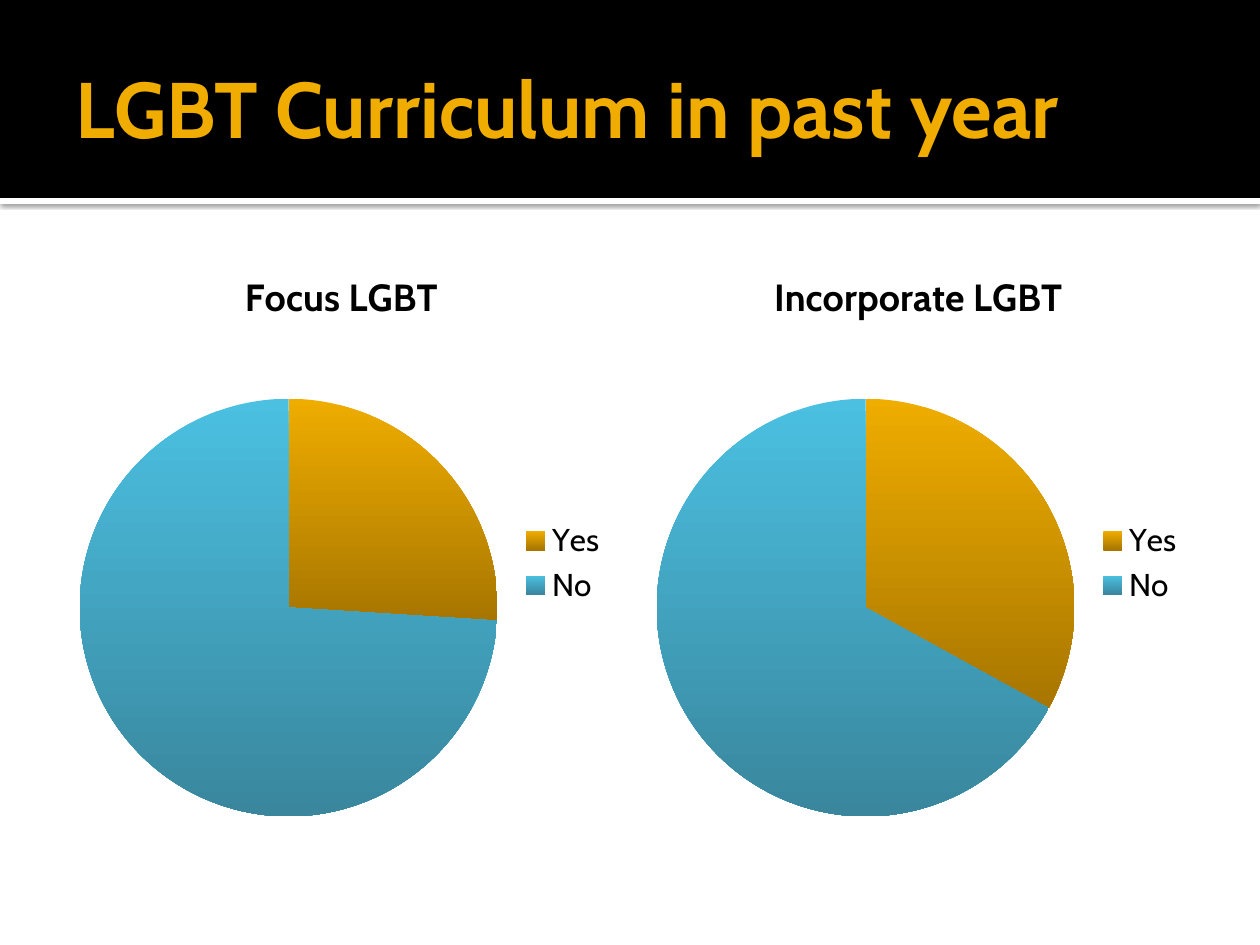
import pptx
import pptx.chart.data
import pptx.dml.color
import pptx.enum.chart
import pptx.enum.shapes
import pptx.enum.text
import pptx.oxml
import pptx.oxml.ns
import pptx.util
from dataclasses import dataclass


@dataclass(frozen=True)
class Theme:
    font: str = "Cabin"
    gold: str = "F0AD00"
    black: str = "000000"
    white: str = "FFFFFF"
    fades: tuple = (("EFAD00", "A87600"), ("4BC0E1", "39869D"))
    head: float = 45
    label: float = 21.6
    text: float = 18


theme = Theme()
SCALE = 914400 / 126


def px(*sizes):
    return [pptx.util.Emu(round(size * SCALE)) for size in sizes]


def style(font, size, color, bold=False):
    font.name = theme.font
    font.size = pptx.util.Pt(size)
    font.bold = bold
    font.color.rgb = pptx.dml.color.RGBColor.from_string(color)


deck = pptx.Presentation()
deck.slide_width, deck.slide_height = px(1260, 945)
slide = deck.slides.add_slide(deck.slide_layouts[5])

# Header: white strip with a shadow, then the black band
for top, height, color in ((198, 6, theme.white), (0, 198, theme.black)):
    bar = slide.shapes.add_shape(
        pptx.enum.shapes.MSO_SHAPE.RECTANGLE, *px(0, top, 1260, height))
    bar.shadow.inherit = False
    bar.fill.solid()
    bar.fill.fore_color.rgb = pptx.dml.color.RGBColor.from_string(color)
    bar.line.fill.background()
    if color == theme.white:
        effects = bar.element.spPr.find(pptx.oxml.ns.qn("a:effectLst"))
        effects.append(pptx.oxml.parse_xml(
            f'<a:outerShdw {pptx.oxml.ns.nsdecls("a")} blurRad="31750" '
            'dist="10160" dir="5400000" algn="t" rotWithShape="0">'
            f'<a:srgbClr val="{theme.black}"><a:alpha val="60000"/></a:srgbClr>'
            '</a:outerShdw>'))

# Title, brought in front of the band
title = slide.shapes.title
title.element.getparent().append(title.element)
title.left, title.top, title.width, title.height = px(63, 21, 1134, 173)
frame = title.text_frame
frame.text = "LGBT Curriculum in past year"
frame.word_wrap = True
frame.auto_size = pptx.enum.text.MSO_AUTO_SIZE.NONE
frame.vertical_anchor = pptx.enum.text.MSO_ANCHOR.MIDDLE
frame.margin_left, frame.margin_top, frame.margin_right, frame.margin_bottom = px(
    13, 6, 6, 6)
line = frame.paragraphs[0]
line.alignment = pptx.enum.text.PP_ALIGN.LEFT
style(line.font, theme.head, theme.gold, True)

# Two pies side by side
pies = (("Focus LGBT", (26, 74)), ("Incorporate LGBT", (33, 67)))
for col, (name, values) in enumerate(pies):
    data = pptx.chart.data.CategoryChartData()
    data.categories = ["Yes", "No"]
    data.add_series(name, values)
    chart = slide.shapes.add_chart(
        pptx.enum.chart.XL_CHART_TYPE.PIE,
        *px(63 + 577 * col, 244, 557, 638), data).chart
    style(chart.font, theme.text, theme.black)

    chart.has_title = True
    label = chart.chart_title.text_frame
    label.text = name
    style(label.paragraphs[0].font, theme.label, theme.black, True)

    chart.has_legend = True
    chart.legend.position = pptx.enum.chart.XL_LEGEND_POSITION.RIGHT
    chart.legend.include_in_layout = False

    plot = chart.plots[0]
    plot.vary_by_categories = True
    for index, fade in enumerate(theme.fades):
        slice_format = plot.series[0].points[index].format
        slice_format.line.fill.background()
        slice_format.fill.gradient()
        slice_format.fill.gradient_angle = 270
        for stop, color in zip(slice_format.fill.gradient_stops, fade):
            stop.color.rgb = pptx.dml.color.RGBColor.from_string(color)

    # Fixed place for the pie inside its chart
    area = chart.element.chart.plotArea
    for old in area.findall(pptx.oxml.ns.qn("c:layout")):
        area.remove(old)
    area.insert(0, pptx.oxml.parse_xml(
        f'<c:layout {pptx.oxml.ns.nsdecls("c")}><c:manualLayout>'
        '<c:layoutTarget val="inner"/><c:xMode val="edge"/><c:yMode val="edge"/>'
        '<c:x val="0.03"/><c:y val="0.24"/><c:w val="0.75"/><c:h val="0.66"/>'
        '</c:manualLayout></c:layout>'))

deck.save("out.pptx")
